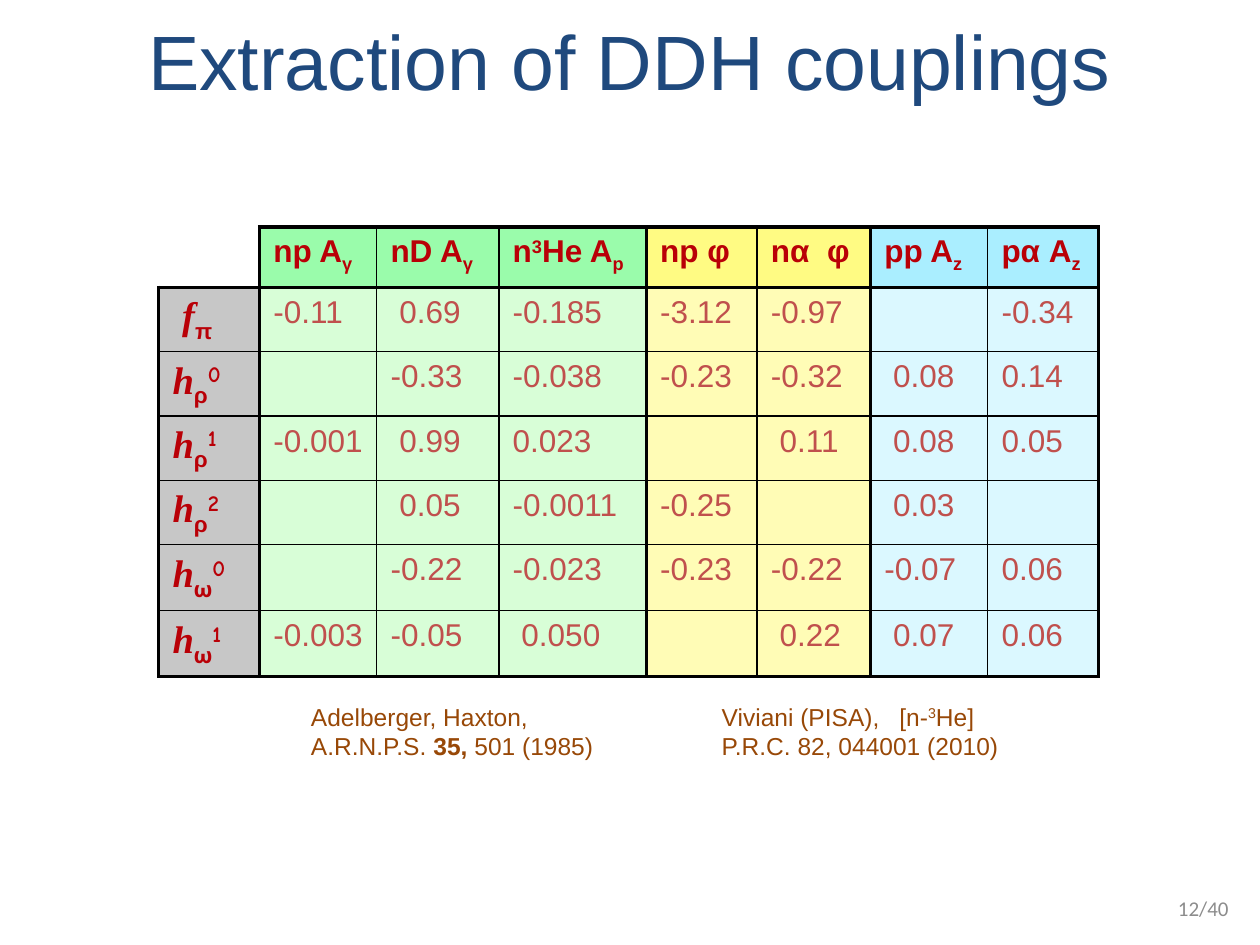
from dataclasses import dataclass

from lxml import etree
from pptx import Presentation
from pptx.dml.color import RGBColor as RGB
from pptx.enum.text import MSO_ANCHOR as Anchor, MSO_AUTO_SIZE as Fit, PP_ALIGN as Align
from pptx.oxml.ns import qn
from pptx.util import Inches, Pt


@dataclass(frozen=True)
class Theme:
    # Colours
    title: str = "1F497D"
    head: str = "B90007"
    value: str = "C0504D"
    note: str = "984807"
    page: str = "8C8C8C"
    line: str = "000000"
    side: str = "C7C7C7"
    # Fonts
    sans: str = "Arial"
    serif: str = "Times New Roman"
    power: str = "Comic Neue"
    omega: str = "Roboto"
    foot: str = "Calibri"
    # Type sizes and line widths in points
    big: int = 44
    symbol: int = 22
    body: int = 18
    small: int = 14
    tiny: int = 12
    thick: float = 2.25
    thin: float = 1


SUB, SUP = {"base": -25}, {"base": 30}
GREEN, YELLOW, BLUE = ("9AFCAB", "D8FED7"), ("FFFB83", "FFFCB6"), ("AAEEFF", "DBF8FF")
BANDS = [GREEN] * 3 + [YELLOW] * 2 + [BLUE] * 2  # header and body fill per column

HEADS = [
    [("np A", {}), ("γ", SUB)],
    [("nD A", {}), ("γ", SUB)],
    [("n", {}), ("3", SUP), ("He A", {}), ("p", SUB)],
    [("np φ", {})],
    [("nα  φ", {})],
    [("pp A", {}), ("z", SUB)],
    [("pα A", {}), ("z", SUB)],
]
ROWS = [
    (" f", "π", "", ["-0.11", " 0.69", "-0.185", "-3.12", "-0.97", "", "-0.34"]),
    ("h", "ρ", "0", ["", "-0.33", "-0.038", "-0.23", "-0.32", " 0.08", "0.14"]),
    ("h", "ρ", "1", ["-0.001", " 0.99", "0.023", "", " 0.11", " 0.08", "0.05"]),
    ("h", "ρ", "2", ["", " 0.05", "-0.0011", "-0.25", "", " 0.03", ""]),
    ("h", "ω", "0", ["", "-0.22", "-0.023", "-0.23", "-0.22", "-0.07", "0.06"]),
    ("h", "ω", "1", ["-0.003", "-0.05", " 0.050", "", " 0.22", " 0.07", "0.06"]),
]
WIDTHS = [0.8, 0.93, 0.97, 1.17, 0.88, 0.9, 0.93, 0.88]
HEIGHTS = [0.48] + [0.47] * len(ROWS)
# Grid lines drawn thick, counted from the top and left edges
BOLD_ROWS, BOLD_COLS = {0, 1, len(HEIGHTS)}, {0, 1, 4, 6, len(WIDTHS)}


class Deck:
    def __init__(self, theme):
        self.theme = theme
        self.prs = Presentation()
        self.prs.slide_width, self.prs.slide_height = Inches(10), Inches(7.5)
        self.slide = self.prs.slides.add_slide(self.prs.slide_layouts[6])

    def runs(self, para, parts, **style):
        """Fill a paragraph with (text, changes) parts; a newline part breaks the line."""
        for text, extra in parts:
            if text == "\n":
                para.add_line_break()
                continue
            run = para.add_run()
            run.text = text
            look = {"font": self.theme.sans, "bold": False, "italic": False, **style, **extra}
            font = run.font
            font.name, font.size = look["font"], Pt(look["size"])
            font.bold, font.italic = look["bold"], look["italic"]
            font.color.rgb = RGB.from_string(look["color"])
            if "base" in look:
                run._r.get_or_add_rPr().set("baseline", str(look["base"] * 1000))

    def text(self, box, parts, align=Align.LEFT, anchor=Anchor.TOP, wrap=True, tab=None, **style):
        shape = self.slide.shapes.add_textbox(*map(Inches, box))
        frame = shape.text_frame
        frame.word_wrap, frame.vertical_anchor = wrap, anchor
        frame.auto_size = Fit.NONE if wrap else Fit.SHAPE_TO_FIT_TEXT
        para = frame.paragraphs[0]
        para.alignment = align
        if tab:
            stops = etree.SubElement(para._p.get_or_add_pPr(), qn("a:tabLst"))
            etree.SubElement(stops, qn("a:tab"), pos=str(Inches(tab)), algn="l")
        self.runs(para, parts, **style)

    def border(self, cell, row, col):
        sides = [("L", col in BOLD_COLS), ("R", col + 1 in BOLD_COLS),
                 ("T", row in BOLD_ROWS), ("B", row + 1 in BOLD_ROWS)]
        props = cell._tc.get_or_add_tcPr()
        for side, bold in sides:
            width = self.theme.thick if bold else self.theme.thin
            line = etree.SubElement(props, qn(f"a:ln{side}"), w=str(Pt(width)))
            if row == col == 0 and side in "LT":  # the corner stays open
                etree.SubElement(line, qn("a:noFill"))
                continue
            fill = etree.SubElement(line, qn("a:solidFill"))
            etree.SubElement(fill, qn("a:srgbClr"), val=self.theme.line)

    def cell(self, table, row, col, parts, fill, **style):
        cell = table.cell(row, col)
        cell.margin_left = cell.margin_right = Inches(0.11)
        cell.margin_top = cell.margin_bottom = Inches(0.06)
        self.border(cell, row, col)
        if fill:
            cell.fill.solid()
            cell.fill.fore_color.rgb = RGB.from_string(fill)
        else:
            cell.fill.background()
        self.runs(cell.text_frame.paragraphs[0], parts, **style)

    def table(self, left, top):
        t = self.theme
        size = map(Inches, (left, top, sum(WIDTHS), sum(HEIGHTS)))
        table = self.slide.shapes.add_table(len(HEIGHTS), len(WIDTHS), *size).table
        table.first_row = table.horz_banding = False
        for col, width in zip(table.columns, WIDTHS):
            col.width = Inches(width)
        for row, height in zip(table.rows, HEIGHTS):
            row.height = Inches(height)

        # Header row
        self.cell(table, 0, 0, [], None)
        for c, (parts, band) in enumerate(zip(HEADS, BANDS), 1):
            self.cell(table, 0, c, parts, band[0], size=t.body, color=t.head, bold=True)

        # Coupling symbols and their values
        for r, (name, sub, power, values) in enumerate(ROWS, 1):
            greek = t.omega if sub == "ω" else t.sans
            parts = [(name, {"font": t.serif, "italic": True}), (sub, {"font": greek, **SUB})]
            if power:
                parts.append((power, {"font": t.power, **SUP}))
            self.cell(table, r, 0, parts, t.side, size=t.symbol, color=t.head, bold=True)
            for c, (value, band) in enumerate(zip(values, BANDS), 1):
                parts = [(value, {})] if value else []
                self.cell(table, r, c, parts, band[1], size=t.body, color=t.value)


def main():
    t = Theme()
    deck = Deck(t)

    # Page number and title
    deck.text((9.11, 7.01, 0.74, 0.4), [("12/40", {})], Align.RIGHT, Anchor.MIDDLE,
              font=t.foot, size=t.tiny, color=t.page)
    deck.text((0, 0, 10, 0.95), [("Extraction of DDH couplings", {})], Align.CENTER,
              Anchor.MIDDLE, size=t.big, color=t.title)

    # Couplings
    deck.table(1.26, 1.8)

    # References
    note = {"wrap": False, "size": t.small, "color": t.note}
    deck.text((5.63, 5.52, 2.43, 0.57),
              [("Viviani (PISA),\t[n-", {}), ("3", SUP), ("He]", {}), ("\n", {}),
               ("P.R.C. 82, 044001 (2010)", {})], tab=1.41, **note)
    deck.text((2.37, 5.52, 2.46, 0.57),
              [("Adelberger, Haxton,", {}), ("\n", {}), ("A.R.N.P.S. ", {}),
               ("35, ", {"bold": True}), ("501 (1985)", {})], **note)

    deck.prs.save("out.pptx")


if __name__ == "__main__":
    main()
